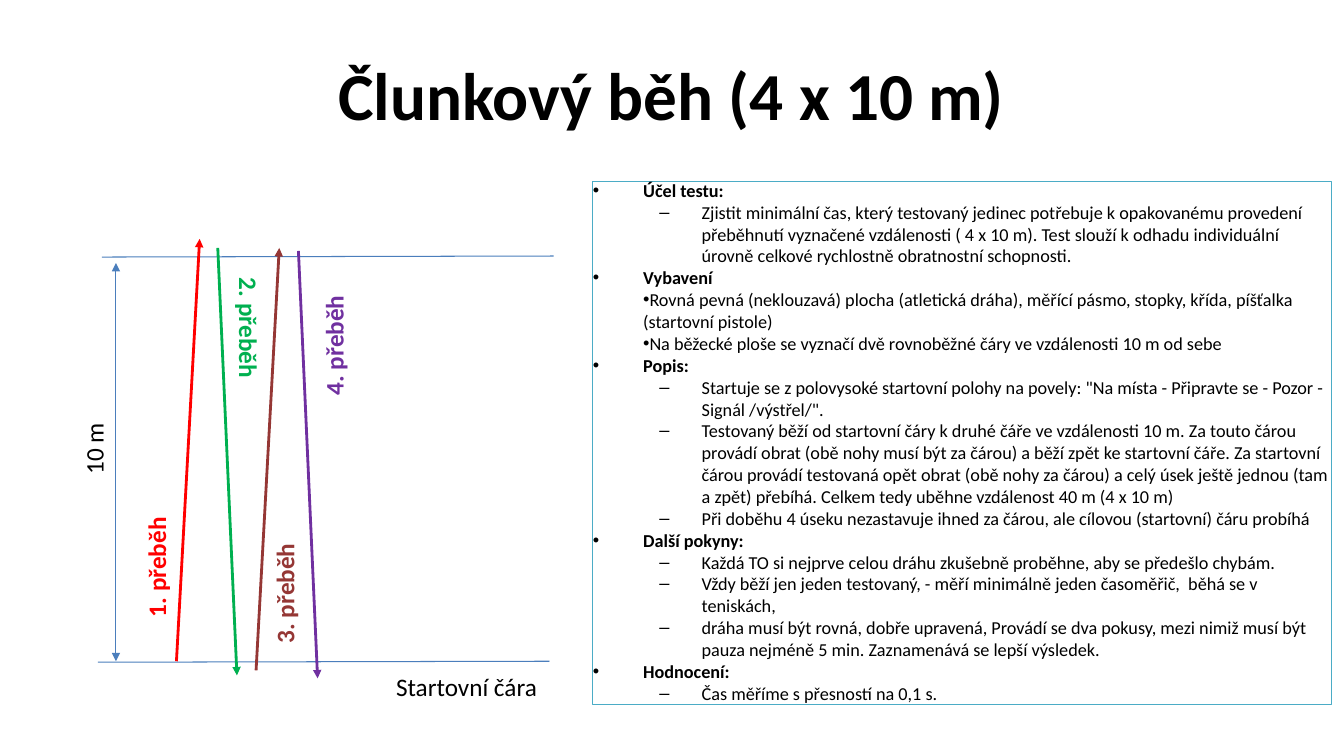
from lxml import etree
from pptx import Presentation
from pptx import util as u
from pptx.dml.color import RGBColor
from pptx.enum import shapes, text
from pptx.oxml.ns import qn

PX = 9144  # 100 px to the inch
THEME = {
    "font": "Calibri", "title": 48, "label": 18, "body": 13,
    "black": "000000", "guide": "4B7EBC", "frame": "4BACC6",
    "run1": "FF0000", "run2": "00B050", "run3": "953735", "run4": "7030A0",
}


def add_line(start, end, color, width, arrows=()):
    line = page.shapes.add_connector(
        shapes.MSO_CONNECTOR.STRAIGHT, *(n * PX for n in (*start, *end)))
    line.line.color.rgb = RGBColor.from_string(THEME[color])
    line.line.width = u.Pt(width)
    outline = line.line._get_or_add_ln()
    for arrow in arrows:
        etree.SubElement(outline, qn(f"a:{arrow}"), type="triangle")
    etree.SubElement(line._element.spPr, qn("a:effectLst"))


def add_label(words, left, top, width, height, color="black", bold=False, turn=0):
    box = page.shapes.add_textbox(left * PX, top * PX, width * PX, height * PX)
    box.rotation = turn
    frame = box.text_frame
    frame.word_wrap = True
    frame.auto_size = text.MSO_AUTO_SIZE.SHAPE_TO_FIT_TEXT
    para = frame.paragraphs[0]
    para.text = words
    para.font.name = THEME["font"]
    para.font.size = u.Pt(THEME["label"])
    para.font.bold = bold
    para.font.color.rgb = RGBColor.from_string(THEME[color])
    return box


deck = Presentation()
deck.slide_width, deck.slide_height = 1333 * PX, 750 * PX
page = deck.slides.add_slide(deck.slide_layouts[5])

# Title
title = page.shapes.title
title.left, title.top, title.width, title.height = (n * PX for n in (66, 30, 1200, 125))
title.text_frame.vertical_anchor = text.MSO_ANCHOR.MIDDLE
para = title.text_frame.paragraphs[0]
para.text = "Člunkový běh (4 x 10 m)"
para.alignment = text.PP_ALIGN.CENTER
para.font.name = THEME["font"]
para.font.size = u.Pt(THEME["title"])
para.font.bold = True
para.font.color.rgb = RGBColor.from_string(THEME["black"])

# Test description: kind of paragraph, wording
KINDS = {  # level, left margin, first-line indent, bullet
    "head": (0, 50, -50, "•"),
    "dash": (1, 108, -42, "–"),
    "dot": (1, 50, 0, "•"),
}
DESCRIPTION = [
    ("head", "Účel testu:"),
    ("dash", "Zjistit minimální čas, který testovaný jedinec potřebuje k opakovanému "
             "provedení přeběhnutí vyznačené vzdálenosti ( 4 x 10 m). Test slouží k odhadu "
             "individuální úrovně celkové rychlostně obratnostní schopnosti."),
    ("head", "Vybavení"),
    ("dot", "Rovná pevná (neklouzavá) plocha (atletická dráha), měřící pásmo, stopky, "
            "křída, píšťalka (startovní pistole)"),
    ("dot", "Na běžecké ploše se vyznačí dvě rovnoběžné čáry ve vzdálenosti 10 m od sebe"),
    ("head", "Popis:"),
    ("dash", "Startuje se z polovysoké startovní polohy na povely: "
             "\"Na místa - Připravte se - Pozor - Signál /výstřel/\"."),
    ("dash", "Testovaný běží od startovní čáry k druhé čáře ve vzdálenosti 10 m. Za touto "
             "čárou provádí obrat (obě nohy musí být za čárou) a běží zpět ke startovní čáře. "
             "Za startovní čárou provádí testovaná opět obrat (obě nohy za čárou) a celý úsek "
             "ještě jednou (tam a zpět) přebíhá. Celkem tedy uběhne vzdálenost 40 m (4 x 10 m)"),
    ("dash", "Při doběhu 4 úseku nezastavuje ihned za čárou, ale cílovou (startovní) "
             "čáru probíhá"),
    ("head", "Další pokyny:"),
    ("dash", "Každá TO si nejprve celou dráhu zkušebně proběhne, aby se předešlo chybám."),
    ("dash", "Vždy běží jen jeden testovaný, - měří minimálně jeden časoměřič,  "
             "běhá se v teniskách,"),
    ("dash", "dráha musí být rovná, dobře upravená, Provádí se dva pokusy, mezi nimiž musí "
             "být pauza nejméně 5 min. Zaznamenává se lepší výsledek."),
    ("head", "Hodnocení:"),
    ("dash", "Čas měříme s přesností na 0,1 s."),
]
box = page.shapes.add_textbox(*(n * PX for n in (588, 180, 733, 519)))
box.line.color.rgb = RGBColor.from_string(THEME["frame"])
box.line.width = u.Pt(0.75)
frame = box.text_frame
frame.word_wrap = True
frame.auto_size = text.MSO_AUTO_SIZE.SHAPE_TO_FIT_TEXT
frame.vertical_anchor = text.MSO_ANCHOR.MIDDLE
frame.margin_left = frame.margin_top = frame.margin_right = 0
frame.margin_bottom = 3 * PX
for index, (kind, words) in enumerate(DESCRIPTION):
    para = frame.add_paragraph() if index else frame.paragraphs[0]
    level, margin, indent, bullet = KINDS[kind]
    para.text = words
    para.level = level
    props = para._p.get_or_add_pPr()
    props.set("marL", str(margin * PX))
    props.set("indent", str(indent * PX))
    etree.SubElement(props, qn("a:buFont"), typeface="Arial")
    etree.SubElement(props, qn("a:buChar"), char=bullet)
    para.font.name = THEME["font"]
    para.font.size = u.Pt(THEME["body"])
    para.font.bold = kind == "head"
    para.font.color.rgb = RGBColor.from_string(THEME["black"])

# Track: far line, start line and the distance between them
add_line((101, 255), (549, 254), "guide", 0.75)
add_line((97, 657), (545, 656), "guide", 0.75)
add_line((115, 261), (115, 656), "guide", 0.75, ("headEnd", "tailEnd"))
distance = add_label("10 m", 73, 388, 50, 114)
distance.text_frame._txBody.bodyPr.set("vert", "vert270")
distance.text_frame.paragraphs[0].alignment = text.PP_ALIGN.CENTER
add_label("Startovní čára", 383, 661, 173, 40)

# Four runs: start, end, label corner, label turn
RUNS = [
    ((175, 656), (198, 237), (83, 530), 270),
    ((216, 246), (235, 670), (175, 318), 90),
    ((254, 665), (277, 246), (210, 556), 270),
    ((296, 249), (315, 673), (259, 310), 270),
]
for number, (start, end, corner, turn) in enumerate(RUNS, 1):
    add_line(start, end, f"run{number}", 2, ("tailEnd",))
    add_label(f"{number}. přeběh", *corner, 144, 40, f"run{number}", True, turn)

deck.save("out.pptx")
